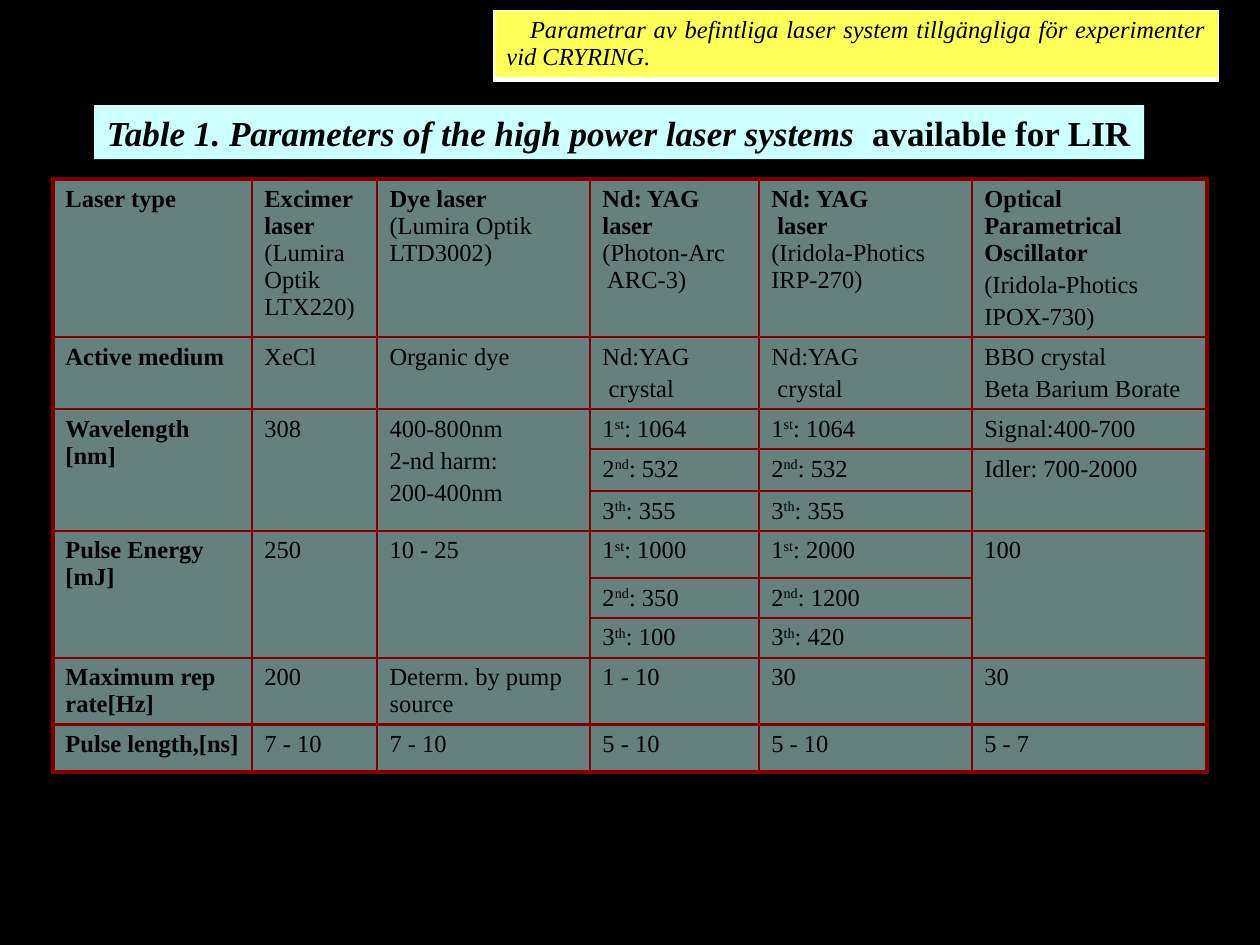
import pptx
import pptx.dml.color
import pptx.enum.text
import pptx.oxml
import pptx.oxml.ns
import pptx.util

Pt = pptx.util.Pt
RGBColor = pptx.dml.color.RGBColor
PP_ALIGN = pptx.enum.text.PP_ALIGN

BLACK = RGBColor(0x00, 0x00, 0x00)
WHITE = RGBColor(0xFF, 0xFF, 0xFF)
PALE_CYAN = RGBColor(0xCC, 0xFF, 0xFF)
YELLOW = RGBColor(0xFF, 0xFF, 0x59)
MAROON = RGBColor(0x80, 0x00, 0x00)
FONT = "Times New Roman"
LINE_HEIGHT = 15.5

COL_WIDTHS = [113.7, 71.5, 121.7, 96.5, 121.7, 134.5]
ROW_HEIGHTS = [90.4, 40.5, 22.9, 24, 22.7, 27, 22.7, 22.9, 38.25, 27]

# *bold*, ^superscript^, one paragraph per line; None continues the cell above.
LASERS = [
    ["*Laser type*", "*Excimer laser* (Lumira Optik LTX220)",
     "*Dye laser*\n(Lumira Optik LTD3002)",
     "*Nd: YAG *\n*laser *\n(Photon-Arc\n ARC-3)",
     "*Nd: YAG*\n* laser*\n(Iridola-Photics IRP-270)",
     "*Optical Parametrical Oscillator*\n(Iridola-Photics\nIPOX-730)"],
    ["*Active medium*", "XeCl", "Organic dye", "Nd:YAG\n crystal",
     "Nd:YAG\n crystal", "BBO crystal\nBeta Barium Borate"],
    ["*Wavelength [nm]*", "308", "400-800nm\n2-nd harm:\n200-400nm",
     "1^st^: 1064", "1^st^: 1064", "Signal:400-700"],
    [None, None, None, "2^nd^: 532", "2^nd^: 532", "Idler: 700-2000"],
    [None, None, None, "3^th^: 355", "3^th^: 355", None],
    ["*Pulse Energy [mJ]*", "250", "10 - 25", "1^st^: 1000", "1^st^: 2000", "100"],
    [None, None, None, "2^nd^: 350", "2^nd^: 1200", None],
    [None, None, None, "3^th^: 100", "3^th^: 420", None],
    ["*Maximum rep rate[Hz]*", "200", "Determ. by pump source", "1 - 10", "30", "30"],
    ["*Pulse length,[ns]*", "7 - 10", "7 - 10", "5 - 10", "5 - 10", "5 - 7"],
]


def add_run(p, text, size, bold=False, italic=False):
    r = p.add_run()
    r.text = text
    r.font.name = FONT
    r.font.size = Pt(size)
    r.font.bold = bold
    r.font.italic = italic
    r.font.color.rgb = BLACK
    return r


def add_marked_text(p, text):
    """Write text whose *...* parts are bold and ^...^ parts superscript."""
    for i, part in enumerate(text.split("*")):
        for j, piece in enumerate(part.split("^")):
            if piece:
                r = add_run(p, piece, 14, bold=i % 2 == 1)
                if j % 2:
                    r._r.get_or_add_rPr().set("baseline", "30000")


def fill_cell(cell, color, alpha=None):
    cell.fill.solid()
    cell.fill.fore_color.rgb = color
    if alpha is not None:
        clr = cell._tc.tcPr.find(".//" + pptx.oxml.ns.qn("a:srgbClr"))
        clr.append(pptx.oxml.parse_xml(
            f'<a:alpha {pptx.oxml.ns.nsdecls("a")} val="{alpha * 1000}"/>'))


def set_borders(cell, color, widths):
    """Draw the left, right, top and bottom borders, ahead of the fill element."""
    tcPr = cell._tc.get_or_add_tcPr()
    for i, (side, width) in enumerate(zip("LRTB", widths)):
        tcPr.insert(i, pptx.oxml.parse_xml(
            f'<a:ln{side} {pptx.oxml.ns.nsdecls("a")} w="{Pt(width)}">'
            f'<a:solidFill><a:srgbClr val="{color}"/></a:solidFill></a:ln{side}>'))


def add_plain_table(s, left, top, widths, heights):
    table = s.shapes.add_table(len(heights), len(widths), Pt(left), Pt(top),
                               Pt(sum(widths)), Pt(sum(heights))).table
    table.first_row = table.horz_banding = False
    for col, width in zip(table.columns, widths):
        col.width = Pt(width)
    for row, height in zip(table.rows, heights):
        row.height = Pt(height)
    return table


def add_laser_table(s):
    table = add_plain_table(s, 30.2, 102.2, COL_WIDTHS, ROW_HEIGHTS)
    last_row, last_col = len(ROW_HEIGHTS) - 1, len(COL_WIDTHS) - 1
    for i, row in enumerate(LASERS):
        for j, text in enumerate(row):
            cell = table.cell(i, j)
            fill_cell(cell, PALE_CYAN, alpha=50)
            outer = (j == 0, j == last_col, i == 0, i == last_row)
            set_borders(cell, MAROON, [2.25 if edge else 1.5 for edge in outer])
            if text is None:
                cell.text_frame.paragraphs[0].line_spacing = Pt(LINE_HEIGHT)
                continue
            end = i
            while end < last_row and LASERS[end + 1][j] is None:
                end += 1
            if end > i:
                cell.merge(table.cell(end, j))
            tight = i == 0 and 0 < j < last_col
            for k, line in enumerate(text.split("\n")):
                p = cell.text_frame.add_paragraph() if k else cell.text_frame.paragraphs[0]
                p.line_spacing = Pt(LINE_HEIGHT)
                if k and not tight:
                    p.space_before = Pt(2.8)
                if i == 0 and j in (3, 4):
                    p.alignment = PP_ALIGN.JUSTIFY
                add_marked_text(p, line)


def add_title(s):
    sp = s.shapes.title
    sp.left, sp.top, sp.width, sp.height = Pt(53.8), Pt(60), Pt(600), Pt(31)
    sp.fill.solid()
    sp.fill.fore_color.rgb = PALE_CYAN
    tf = sp.text_frame
    tf.word_wrap = False
    tf.auto_size = pptx.enum.text.MSO_AUTO_SIZE.NONE
    p = tf.paragraphs[0]
    p.alignment = PP_ALIGN.LEFT
    add_run(p, "Table 1. Parameters of the high power laser systems ", 20, True, True)
    add_run(p, " available for LIR", 20, True)


def add_note(s):
    cell = add_plain_table(s, 282.2, 6, [414], [39.5]).cell(0, 0)
    fill_cell(cell, YELLOW)
    set_borders(cell, WHITE, [1, 1, 1, 3])
    p = cell.text_frame.paragraphs[0]
    p.alignment = PP_ALIGN.JUSTIFY
    p._p.get_or_add_pPr().set("indent", str(Pt(13.5)))
    add_run(p, "Parametrar av befintliga laser system tillgängliga för "
               "experimenter vid CRYRING.", 14, italic=True)


def main():
    prs = pptx.Presentation()
    prs.slide_width, prs.slide_height = Pt(720), Pt(540)
    s = prs.slides.add_slide(prs.slide_layouts[5])
    s.background.fill.solid()
    s.background.fill.fore_color.rgb = BLACK
    add_laser_table(s)
    add_title(s)
    add_note(s)
    prs.save("out.pptx")


if __name__ == "__main__":
    main()
